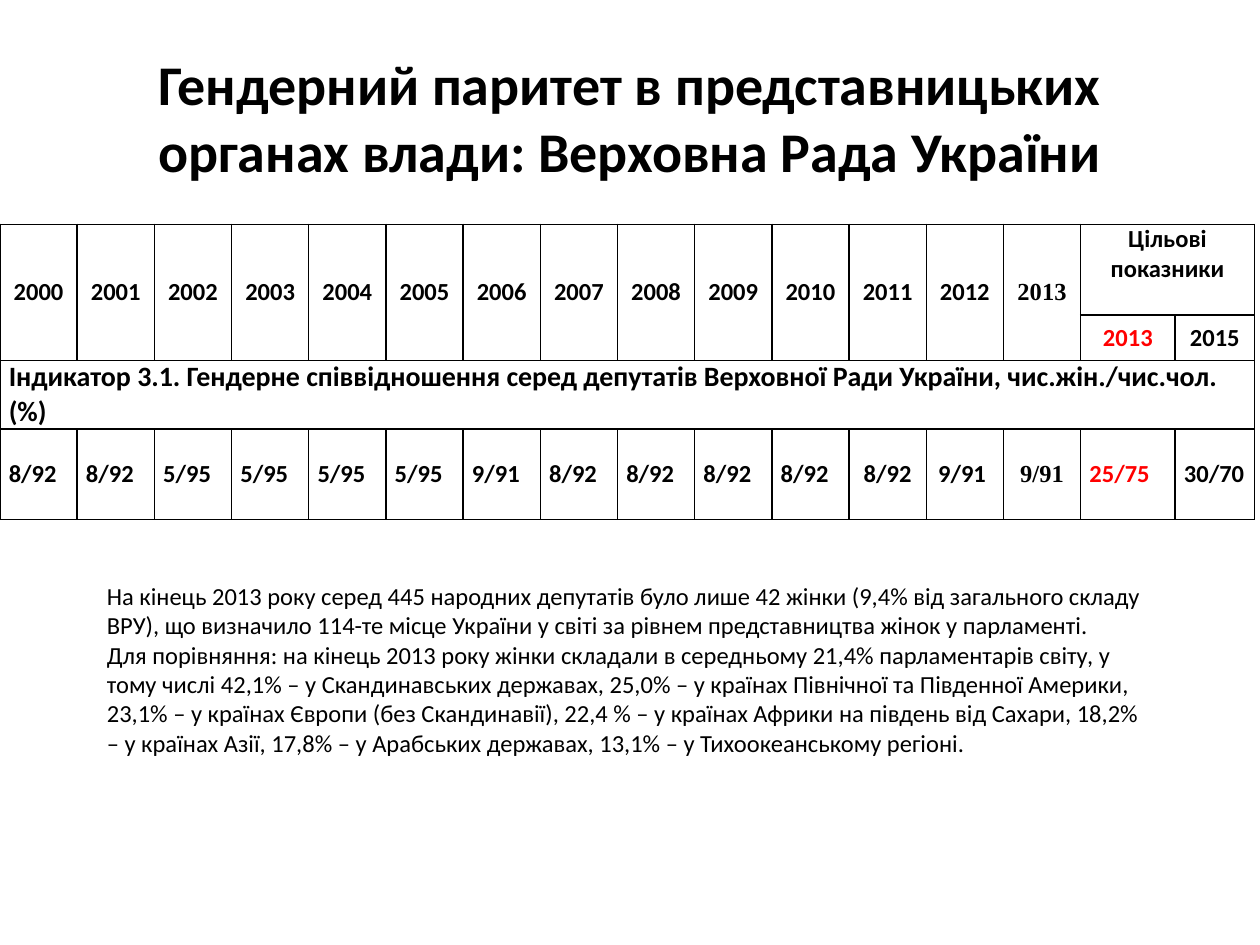
from lxml.etree import SubElement
from pptx import Presentation
from pptx.dml.color import RGBColor
from pptx.enum.text import MSO_ANCHOR as Anchor, MSO_AUTO_SIZE as AutoSize, PP_ALIGN as Align
from pptx.oxml import parse_xml
from pptx.oxml.ns import nsdecls
from pptx.util import Inches, Pt

BLACK, RED = "000000", "FF0000"
SERIF = "Times New Roman"


def add_run(paragraph, text, size, bold=False, color=BLACK, font="Calibri"):
    run = paragraph.add_run()
    run.text = text
    run.font.size = Pt(size)
    run.font.bold = bold
    run.font.name = font
    run.font.color.rgb = RGBColor.from_string(color)


def fill_cell(cell, text, align=Align.CENTER, anchor=Anchor.MIDDLE, size=14, color=BLACK, font="Calibri"):
    cell.vertical_anchor = anchor
    paragraph = cell.text_frame.paragraphs[0]
    paragraph.alignment = align
    paragraph.space_before = paragraph.space_after = Pt(6)
    add_run(paragraph, text, size, True, color, font)


presentation = Presentation()
presentation.slide_width, presentation.slide_height = Inches(10), Inches(7.5)
slide = presentation.slides.add_slide(presentation.slide_layouts[5])

# Title
title = slide.shapes.title
title.left, title.top, title.width, title.height = Inches(0.5), Inches(0.3), Inches(9), Inches(1.25)
title.text_frame.vertical_anchor = Anchor.MIDDLE
paragraph = title.text_frame.paragraphs[0]
paragraph.alignment = Align.CENTER
add_run(paragraph, "Гендерний паритет в представницьких органах влади: Верховна Рада України", 32, True)

# Table grid: fourteen equal year columns, then two target columns
years = range(2000, 2014)
year_count = len(years)
table_width, target_widths = 9.96, [0.75, 0.63]
year_width = (table_width - sum(target_widths)) / year_count
column_widths = [year_width] * year_count + target_widths
row_heights = [0.72, 0.36, 0.36, 0.72]
table = slide.shapes.add_table(len(row_heights), len(column_widths), Inches(0), Inches(1.78),
                               Inches(table_width), Inches(sum(row_heights))).table
table.first_row = table.horz_banding = False
for column, width in zip(table.columns, column_widths):
    column.width = Inches(width)
for row, height in zip(table.rows, row_heights):
    row.height = Inches(height)

# Margins, no fill and thin black borders for every cell
for cell in table.iter_cells():
    cell.margin_left = cell.margin_right = Inches(0.07)
    cell.margin_top = cell.margin_bottom = 0
    cell.fill.background()
    properties = cell._tc.get_or_add_tcPr()
    for position, side in enumerate(["lnL", "lnR", "lnT", "lnB"]):
        border = parse_xml(f'<a:{side} {nsdecls("a")} w="{Pt(1)}"><a:solidFill>'
                           f'<a:srgbClr val="{BLACK}"/></a:solidFill></a:{side}>')
        properties.insert(position, border)

# Header rows
for index, year in enumerate(years):
    table.cell(0, index).merge(table.cell(1, index))
    fill_cell(table.cell(0, index), str(year), font=SERIF if year == 2013 else "Calibri")
table.cell(0, year_count).merge(table.cell(0, year_count + 1))
fill_cell(table.cell(0, year_count), "Цільові показники", anchor=Anchor.TOP)
fill_cell(table.cell(1, year_count), "2013", color=RED)
fill_cell(table.cell(1, year_count + 1), "2015")

# Indicator row
table.cell(2, 0).merge(table.cell(2, len(column_widths) - 1))
fill_cell(table.cell(2, 0),
          "Індикатор 3.1. Гендерне співвідношення серед депутатів Верховної Ради України, "
          "чис.жін./чис.чол. (%)", Align.LEFT, Anchor.TOP, 16)

# Ratio row
ratios = (["8/92"] * 2 + ["5/95"] * 4 + ["9/91"] + ["8/92"] * 5
          + ["9/91 ", "9/91", "25/75", "30/70"])
for index, ratio in enumerate(ratios):
    fill_cell(table.cell(3, index), ratio,
              Align.CENTER if 11 <= index <= 13 else Align.LEFT,
              color=RED if index == year_count else BLACK,
              font=SERIF if index == year_count - 1 else "Calibri")

# Commentary
comments = [
    "На кінець 2013 року серед 445 народних депутатів було лише 42 жінки (9,4% від загального "
    "складу ВРУ), що визначило 114-те місце України у світі за рівнем представництва жінок у "
    "парламенті.",
    "Для порівняння: на кінець 2013 року жінки складали в середньому 21,4% парламентарів світу, "
    "у тому числі 42,1% – у Скандинавських державах, 25,0% – у країнах Північної та Південної "
    "Америки, 23,1% – у країнах Європи (без Скандинавії), 22,4 % – у країнах Африки на південь "
    "від Сахари, 18,2% – у країнах Азії, 17,8% – у Арабських державах, 13,1% – у "
    "Тихоокеанському регіоні.",
]
text_frame = slide.shapes.add_textbox(Inches(0.75), Inches(4.56), Inches(8.43), Inches(1.75)).text_frame
text_frame.word_wrap = True
text_frame.auto_size = AutoSize.SHAPE_TO_FIT_TEXT
for index, comment in enumerate(comments):
    paragraph = text_frame.add_paragraph() if index else text_frame.paragraphs[0]
    add_run(paragraph, comment, 14)

presentation.save("out.pptx")
